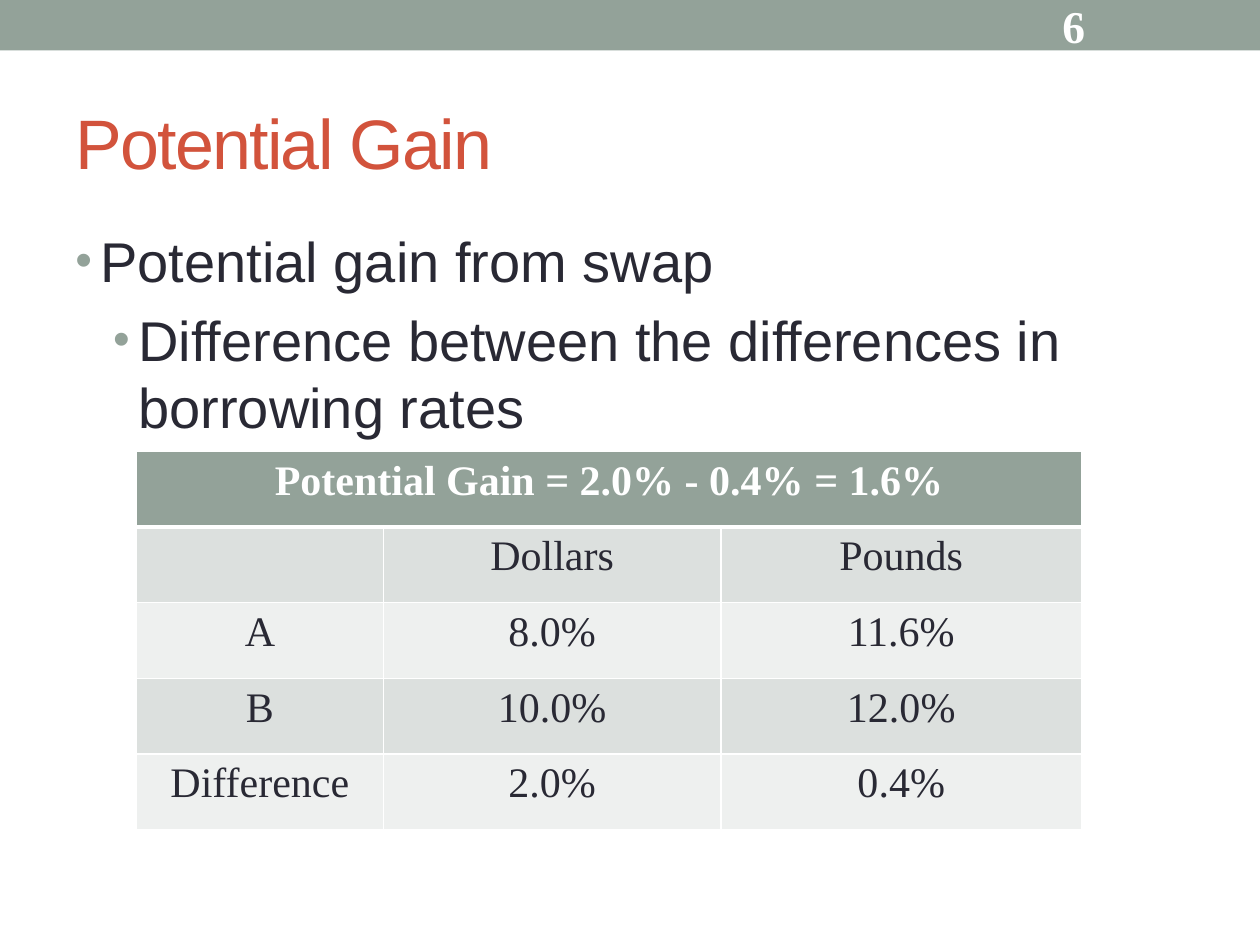
import pptx
import pptx.dml.color
import pptx.enum.shapes
import pptx.enum.text
import pptx.oxml
import pptx.oxml.ns
import pptx.util

Pt = pptx.util.Pt
Anchor = pptx.enum.text.MSO_ANCHOR
SAGE, RUST, INK, WHITE = "93A299", "D2533C", "292934", "FFFFFF"
BANDS = ("DCE0DE", "EEF0EF")
SANS, SERIF = "Arial", "Times New Roman"

TITLE = "Potential Gain"
PAGE_NUMBER = "6"
BULLETS = [  # text, left margin in points
    ("Potential gain from swap", 14.4),
    ("Difference between the differences in borrowing rates", 36),
]
HANGING = 14.4
TABLE_TITLE = "Potential Gain = 2.0% - 0.4% = 1.6%"
RATES = [
    ("", "Dollars", "Pounds"),
    ("A", "8.0%", "11.6%"),
    ("B", "10.0%", "12.0%"),
    ("Difference", "2.0%", "0.4%"),
]
COLUMN_WIDTHS = (141, 193, 206)
ROW_HEIGHT = 43.2


def color(value):
    return pptx.dml.color.RGBColor.from_string(value)


def xml(markup):
    return pptx.oxml.parse_xml(markup.replace(" ", f" {pptx.oxml.ns.nsdecls('a')} ", 1))


def style(paragraph, name, size, shade, bold=False):
    for span in paragraph.runs:
        span.font.name = name
        span.font.size = Pt(size)
        span.font.bold = bold
        span.font.color.rgb = color(shade)


def add_text(page, left, top, width, height, lines, anchor=Anchor.MIDDLE):
    box = page.shapes.add_textbox(Pt(left), Pt(top), Pt(width), Pt(height))
    frame = box.text_frame
    frame.word_wrap = True
    frame.vertical_anchor = anchor
    frame.text = "\n".join(lines)
    return frame.paragraphs


def add_bullet(paragraph, margin):
    properties = paragraph._p.get_or_add_pPr()
    properties.set("marL", str(Pt(margin)))
    properties.set("indent", str(-Pt(HANGING)))
    for markup in (
        f'<a:buClr ><a:srgbClr val="{SAGE}"/></a:buClr>',
        '<a:buSzPct val="85000"/>',
        '<a:buFont typeface="Arial"/>',
        '<a:buChar char="•"/>',
    ):
        properties.append(xml(markup))


def fill_cell(cell, text, fill, shade, bold, top, bottom):
    """Write and color one cell; top and bottom are border widths."""
    cell.text = text
    paragraph = cell.text_frame.paragraphs[0]
    paragraph.alignment = pptx.enum.text.PP_ALIGN.CENTER
    style(paragraph, SERIF, 24, shade, bold)
    properties = cell._tc.get_or_add_tcPr()
    for side, width in (("L", 1), ("R", 1), ("T", top), ("B", bottom)):
        properties.append(xml(
            f'<a:ln{side} w="{Pt(width)}"><a:solidFill><a:srgbClr val="{WHITE}"/>'
            f"</a:solidFill></a:ln{side}>"
        ))
    cell.fill.solid()
    cell.fill.fore_color.rgb = color(fill)


def add_rates(page, left, top):
    rows = [(TABLE_TITLE, "", "")] + RATES
    table = page.shapes.add_table(
        len(rows), len(COLUMN_WIDTHS), Pt(left), Pt(top),
        Pt(sum(COLUMN_WIDTHS)), Pt(ROW_HEIGHT * len(rows)),
    ).table
    for column, width in zip(table.columns, COLUMN_WIDTHS):
        column.width = Pt(width)
    for index, texts in enumerate(rows):
        table.rows[index].height = Pt(ROW_HEIGHT)
        header = index == 0
        fill = SAGE if header else BANDS[(index - 1) % 2]
        for number, text in enumerate(texts):
            fill_cell(
                table.cell(index, number), text, fill, WHITE if header else INK, header,
                top=3 if index == 1 else 1, bottom=3 if header else 1,
            )
    table.cell(0, 0).merge(table.cell(0, len(COLUMN_WIDTHS) - 1))


def main():
    deck = pptx.Presentation()
    deck.slide_width, deck.slide_height = Pt(720), Pt(540)
    page = deck.slides.add_slide(deck.slide_layouts[6])

    band = page.shapes.add_shape(
        pptx.enum.shapes.MSO_SHAPE.RECTANGLE, 0, 0, deck.slide_width, Pt(28.8))
    band.shadow.inherit = False
    band.fill.solid()
    band.fill.fore_color.rgb = color(SAGE)
    band.line.fill.background()

    title = add_text(page, 36, 42, 648, 77.76, [TITLE])[0]
    style(title, SANS, 40, RUST)
    title.runs[0].font._element.set("spc", "-100")

    body = add_text(page, 36, 126, 648, 384, [text for text, _ in BULLETS], Anchor.TOP)
    for paragraph, (_, margin) in zip(body, BULLETS):
        paragraph.space_before = Pt(6.4)
        style(paragraph, SANS, 32, INK)
        add_bullet(paragraph, margin)

    number = add_text(page, 600, 1.5, 84, 26, [PAGE_NUMBER])[0]
    style(number, SERIF, 26, WHITE, bold=True)

    add_rates(page, 78, 258)
    deck.save("out.pptx")


if __name__ == "__main__":
    main()
